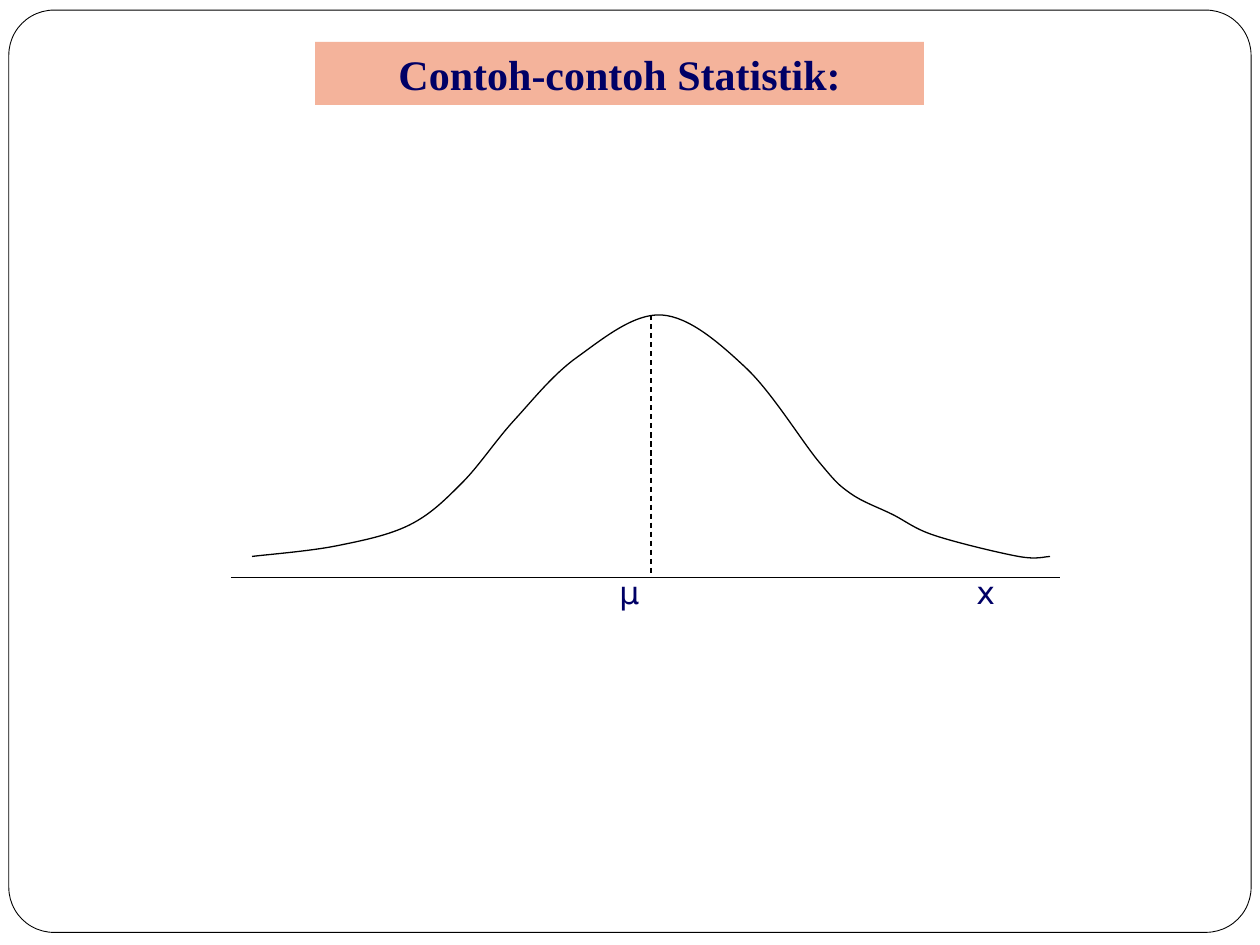
from lxml import etree
from pptx import Presentation, util as u
from pptx.dml.color import RGBColor
from pptx.enum import dml, shapes, text
from pptx.oxml.ns import qn

COLORS = {"ink": "000066", "line": "000000", "banner": "F4B39B", "paper": "FFFFFF"}
UNIT = u.Inches(1) // 12  # grid: 120 columns by 90 rows

presentation = Presentation()
presentation.slide_width, presentation.slide_height = 120 * UNIT, 90 * UNIT
slide = presentation.slides.add_slide(presentation.slide_layouts[6])


def add_text(content, column, row, columns, rows, size=18, font="DejaVu Sans", bold=False,
             align=text.PP_ALIGN.LEFT, anchor=text.MSO_ANCHOR.TOP, side=0, fill=None):
    box = slide.shapes.add_textbox(*(int(n * UNIT) for n in (column, row, columns, rows)))
    if fill:
        box.fill.solid()
        box.fill.fore_color.rgb = RGBColor.from_string(COLORS[fill])
    frame = box.text_frame
    frame.word_wrap = True
    frame.vertical_anchor = anchor
    frame.margin_left = frame.margin_right = u.Inches(side)
    paragraph = frame.paragraphs[0]
    paragraph.alignment = align
    run = paragraph.add_run()
    run.text = content
    run.font.size, run.font.name, run.font.bold = u.Pt(size), font, bold
    run.font.color.rgb = RGBColor.from_string(COLORS["ink"])


def set_line(shape, width=0.75):
    shape.line.color.rgb = RGBColor.from_string(COLORS["line"])
    shape.line.width = u.Pt(width)


# Frame
frame_shape = slide.shapes.add_shape(
    shapes.MSO_SHAPE.ROUNDED_RECTANGLE,
    u.Inches(0.07), u.Inches(0.08), u.Inches(9.86), u.Inches(7.32))
frame_shape.adjustments[0] = 0.049
frame_shape.shadow.inherit = False
frame_shape.fill.solid()
frame_shape.fill.fore_color.rgb = RGBColor.from_string(COLORS["paper"])
set_line(frame_shape, 0.5)

# Title
add_text("Contoh-contoh Statistik:", 30, 4, 58, 6, size=24, font="Times New Roman", bold=True,
         align=text.PP_ALIGN.CENTER, anchor=text.MSO_ANCHOR.BOTTOM, side=0.1, fill="banner")

# Axis
axis = slide.shapes.add_connector(
    shapes.MSO_CONNECTOR.STRAIGHT, 22 * UNIT, 55 * UNIT, 101 * UNIT, 55 * UNIT)

# Bell curve through grid points
knots = [(24, 53), (32, 52), (39, 50), (44, 46), (49, 40), (55, 34), (63, 30),
         (71, 35), (78, 44), (81, 47), (85, 49), (89, 51), (97, 53), (100, 53)]
builder = slide.shapes.build_freeform(*(n * UNIT for n in knots[0]))
builder.add_line_segments([(x * UNIT, y * UNIT) for x, y in knots[1:]], close=False)
curve = builder.convert_to_shape()
curve.shadow.inherit = False
curve.fill.background()
set_line(curve)

# Turn each straight segment into a Bezier whose slopes follow the neighbouring knots
left, top = knots[0][0], min(y for _, y in knots)
padded = [knots[0], *knots, knots[-1]]
segments = list(curve.element.iter(qn("a:lnTo")))
for segment, before, start, end, after in zip(
        segments, padded, padded[1:], padded[2:], padded[3:]):
    segment.tag = qn("a:cubicBezTo")
    leaving = [b + (c - a) / 6 for a, b, c in zip(before, start, end)]
    arriving = [c - (d - b) / 6 for b, c, d in zip(start, end, after)]
    for position, (x, y) in enumerate((leaving, arriving)):
        control = etree.Element(qn("a:pt"), x=str(round((x - left) * UNIT)),
                                y=str(round((y - top) * UNIT)))
        segment.insert(position, control)

# Dashed mean line
mean_line = slide.shapes.add_connector(
    shapes.MSO_CONNECTOR.STRAIGHT, 62 * UNIT, 30 * UNIT, 62 * UNIT, 55 * UNIT)
for connector in (axis, mean_line):
    set_line(connector)
    etree.SubElement(connector.element.spPr, qn("a:effectLst"))
mean_line.line.dash_style = dml.MSO_LINE.DASH

# Axis labels
for label, column in [("µ", 59), ("x", 93)]:
    add_text(label, column, 54, 7, 6.8)

presentation.save("out.pptx")
